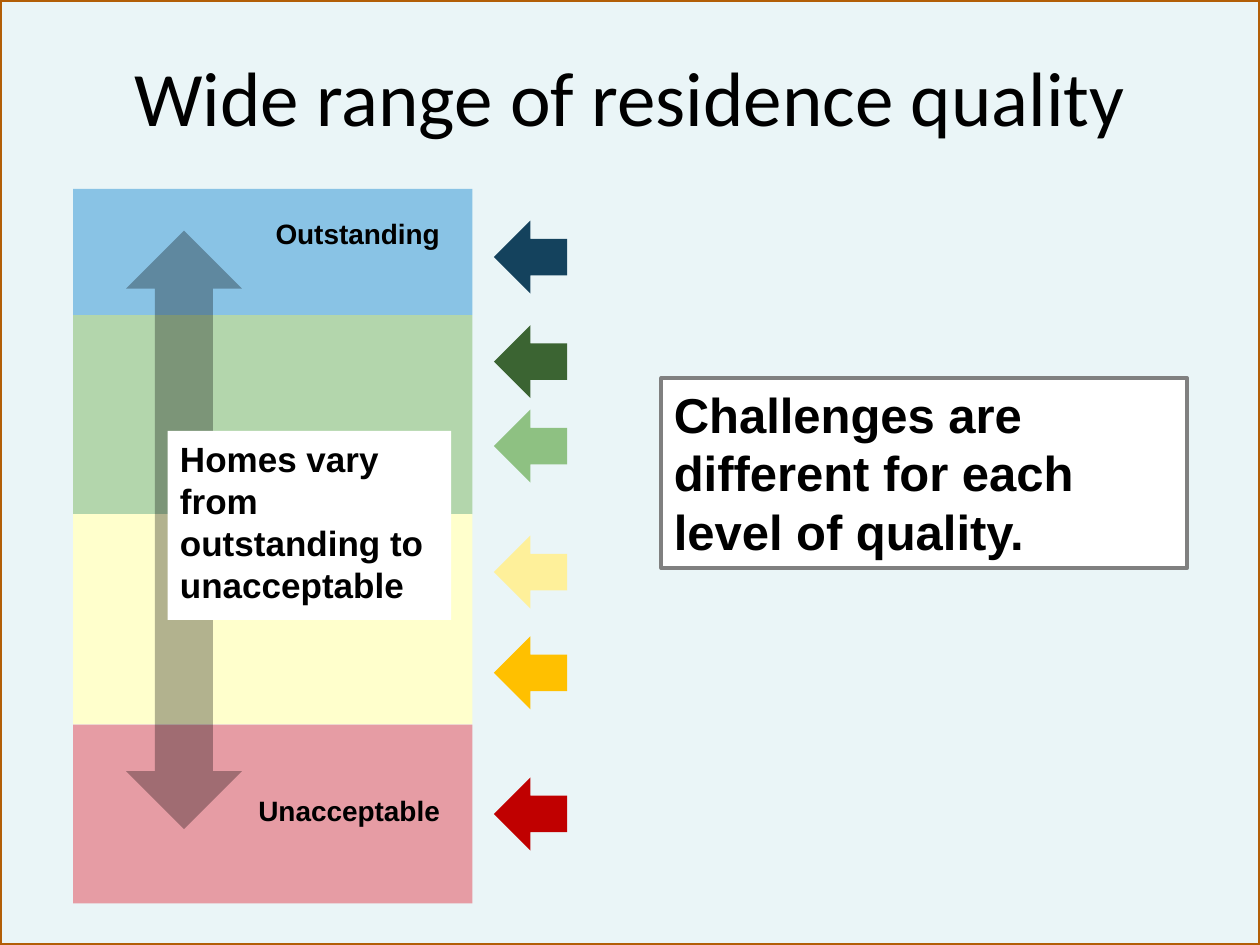
"""Build a slide on the wide range of residence quality."""
from lxml.etree import SubElement
from pptx import Presentation
from pptx.dml.color import RGBColor
from pptx.enum.shapes import MSO_SHAPE
from pptx.enum.text import MSO_ANCHOR, PP_ALIGN
from pptx.oxml.ns import qn
from pptx.util import Inches, Pt

COLORS = {
    "tint": "389EB2", "frame": "B25E07", "text": "000000", "white": "FFFFFF",
    "border": "808080", "blue": "89C3E5", "green": "B3D6AC", "cream": "FFFFCC",
    "rose": "E69CA4", "navy": "14425D", "forest": "3B6432", "leaf": "8EC182",
    "straw": "FEF09A", "amber": "FFC000", "red": "C00000",
}
TITLE = "Wide range of residence quality"
TITLE_FORMAT = {"name": "Calibri", "size": Pt(44)}
BANDS = [("blue", 1), ("green", 1.58), ("cream", 1.67), ("rose", 1.42)]
BAND_LEFT, BAND_TOP, BAND_WIDTH = 0.58, 1.5, 3.17
LEVEL_ARROWS = [("navy", 1.75), ("forest", 2.58), ("leaf", 3.25),
                ("straw", 4.25), ("amber", 5.05), ("red", 6.17)]
ARROW_LEFT, ARROW_SIZE = 3.92, 0.58
BAND_LABELS = [("Outstanding", 1.67), ("Unacceptable", 6.25)]
CALLOUTS = [
    ("Homes vary from outstanding to unacceptable", (1.33, 3.42, 2.25, 1.5), 20, None),
    ("Challenges are different for each level of quality.", (5.25, 3, 4.17, 1.51), 28, "border"),
]


def color(name):
    return RGBColor.from_string(COLORS[name])


def add_block(shapes, kind, box, fill, line=None, width=2.25, opacity=None):
    shape = shapes.add_shape(kind, *map(Inches, box))
    shape.shadow.inherit = False
    shape.fill.solid()
    shape.fill.fore_color.rgb = color(fill)
    if opacity:
        tone = shape.fill._xPr.find(f".//{qn('a:srgbClr')}")
        SubElement(tone, qn("a:alpha"), val=str(opacity * 1000))
    if line:
        shape.line.color.rgb = color(line)
        shape.line.width = Pt(width)
    else:
        shape.line.fill.background()
    return shape


def write(shape, text, formats, align=PP_ALIGN.LEFT, spacing=None):
    frame = shape.text_frame
    frame.word_wrap = True
    frame.vertical_anchor = MSO_ANCHOR.TOP
    paragraph = frame.paragraphs[0]
    paragraph.alignment = align
    paragraph.line_spacing = spacing
    run = paragraph.add_run()
    run.text = text
    run.font.color.rgb = color("text")
    for name, value in formats.items():
        setattr(run.font, name, value)


def write_bold(shape, text, size, align=PP_ALIGN.LEFT):
    formats = {"name": "Arial", "size": Pt(size), "bold": True}
    write(shape, text, formats, align, Pt(size * 1.2))


def add_scale(slide):
    shapes = slide.shapes.add_group_shape().shapes
    top = BAND_TOP
    for fill, height in BANDS:
        add_block(shapes, MSO_SHAPE.RECTANGLE, (BAND_LEFT, top, BAND_WIDTH, height), fill)
        top += height
    add_block(shapes, MSO_SHAPE.UP_DOWN_ARROW, (1, 1.83, 0.92, 4.75), "text", opacity=30)
    for text, top in BAND_LABELS:
        label = shapes.add_textbox(*map(Inches, (1.92, top, 1.67, 0.37)))
        write_bold(label, text, 16, PP_ALIGN.RIGHT)


def main():
    presentation = Presentation()
    presentation.slide_width, presentation.slide_height = Inches(10), Inches(7.5)
    slide = presentation.slides.add_slide(presentation.slide_layouts[6])
    shapes = slide.shapes
    add_block(shapes, MSO_SHAPE.RECTANGLE, (0, 0, 10, 7.5), "tint", "frame", 2, 10)
    title = shapes.add_textbox(*map(Inches, (0.5, 0.3, 9, 1.25)))
    title.text_frame.margin_top = Inches(0.09)
    write(title, TITLE, TITLE_FORMAT, PP_ALIGN.CENTER)
    for fill, top in LEVEL_ARROWS:
        add_block(shapes, MSO_SHAPE.LEFT_ARROW, (ARROW_LEFT, top, ARROW_SIZE, ARROW_SIZE), fill)
    add_scale(slide)
    for text, box, size, line in CALLOUTS:
        write_bold(add_block(shapes, MSO_SHAPE.RECTANGLE, box, "white", line), text, size)
    presentation.save("out.pptx")


if __name__ == "__main__":
    main()
